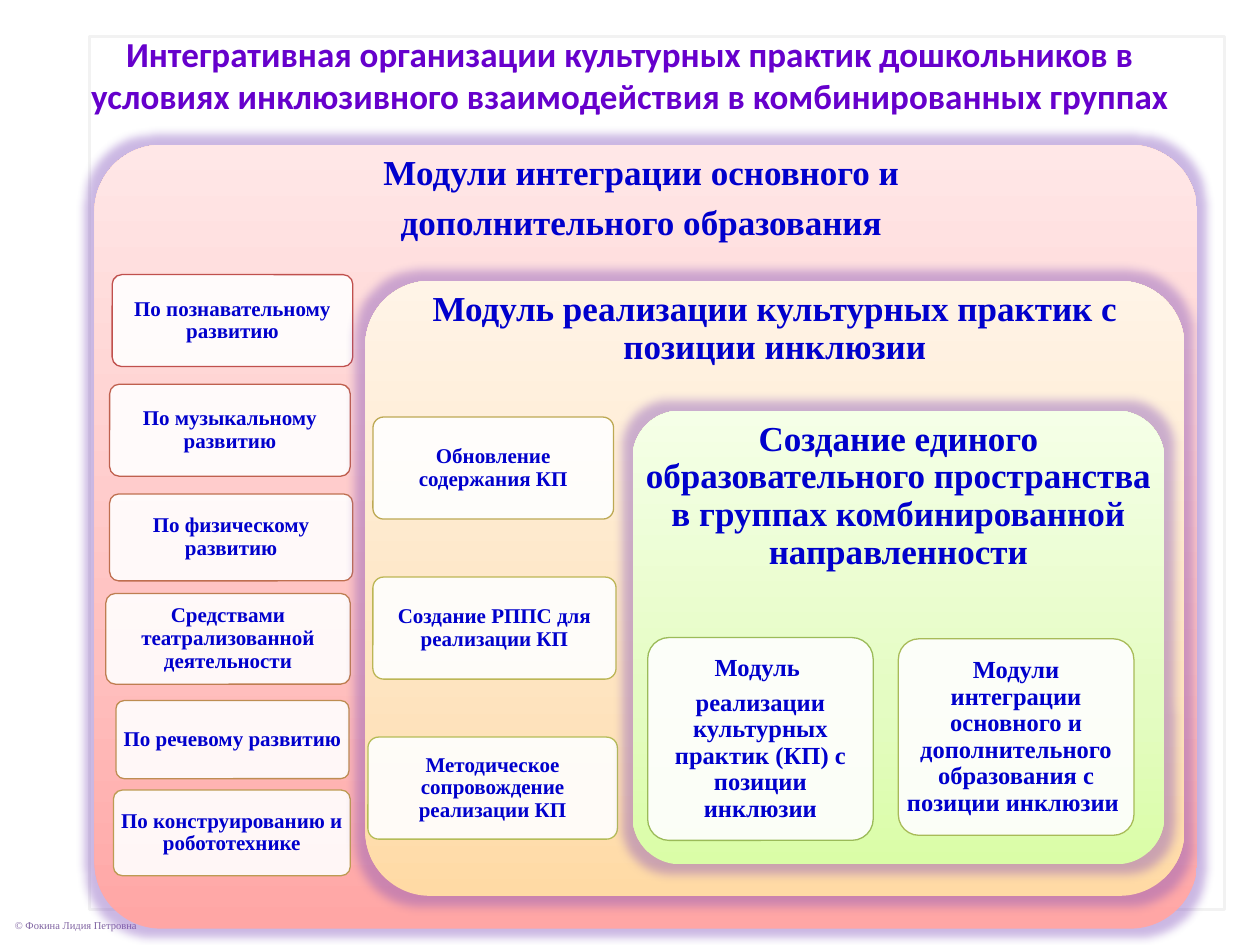
from copy import deepcopy
from dataclasses import dataclass

from lxml.etree import SubElement
from pptx import Presentation
from pptx.dml.color import RGBColor
from pptx.enum.shapes import MSO_SHAPE
from pptx.enum.text import MSO_ANCHOR, PP_ALIGN
from pptx.oxml.ns import qn
from pptx.util import Inches, Pt


@dataclass(frozen=True)
class Theme:
    serif: str = "Times New Roman"
    sans: str = "Calibri"
    title: str = "6600CC"
    text: str = "0000CC"
    copyright: str = "8064A2"
    white: str = "FFFFFF"
    frame: str = "F2F2F2"
    glow: str = "7E4DBA"
    heading_size: int = 20
    module_size: int = 14
    card_size: int = 12
    copyright_size: int = 6


THEME = Theme()
CORNER = 0.105
CORNER_INSET = 0.29  # share of the corner radius a rounded box keeps free of text


@dataclass(frozen=True)
class Card:
    box: tuple[float, float, float, float]
    line: str
    text: str
    size: int = THEME.card_size
    inset: float = 0.05


@dataclass(frozen=True)
class Panel:
    box: tuple[float, float, float, float]
    heading_height: float
    stops: tuple[str, str, str]
    heading: str
    cards: tuple[Card, ...]
    corner: float = CORNER


PANELS = (
    Panel((0.75, 1.15, 8.75, 6.22), 1.39, ("FFA6A5", "FFC0BF", "FFE7E7"),
          "Модули интеграции основного и \nдополнительного образования ", (
        Card((0.89, 2.18, 1.91, 0.73), "C0504D", "По познавательному развитию"),
        Card((0.87, 3.05, 1.91, 0.73), "BF604E", "По музыкальному развитию"),
        Card((0.87, 3.92, 1.93, 0.69), "BF6F4F", "По физическому развитию"),
        Card((0.84, 4.71, 1.94, 0.72), "BE7E51", "Средствами театрализованной деятельности"),
        Card((0.92, 5.56, 1.85, 0.62), "BE8D52", "По речевому развитию"),
        Card((0.9, 6.27, 1.88, 0.68), "BD9B53", "По конструированию и робототехнике"),
    ), corner=0.085),
    Panel((2.9, 2.23, 6.5, 4.88), 2.11, ("FFDAA5", "FEE4C0", "FFF4E7"),
          "Модуль реализации культурных практик с позиции инклюзии", (
        Card((2.96, 3.31, 1.91, 0.81), "BDA954", "Обновление содержания КП"),
        Card((2.96, 4.58, 1.93, 0.81), "BCB655", "Создание РППС для реализации КП"),
        Card((2.92, 5.85, 1.98, 0.81), "B5BC57", "Методическое сопровождение реализации КП"),
    )),
    Panel((5.02, 3.26, 4.22, 3.6), 2.2, ("DAFDA7", "E4FCC2", "F5FFE7"),
          "Создание единого образовательного пространства в группах "
          "комбинированной направленности", (
        Card((7.13, 5.07, 1.87, 1.56), "A8BB58",
             "Модули интеграции основного и дополнительного образования с позиции инклюзии ",
             THEME.module_size, 0.06),
        Card((5.14, 5.06, 1.79, 1.61), "9BBB59",
             "Модуль \nреализации культурных практик (КП) с позиции инклюзии",
             THEME.module_size, 0.06),
    )),
)


def rgb(value: str) -> RGBColor:
    return RGBColor.from_string(value)


def set_margins(frame, inset: float) -> None:
    frame.margin_left = frame.margin_right = Inches(inset)
    frame.margin_top = frame.margin_bottom = Inches(inset)


def style_runs(frame, font: str, size: int, color: str, bold: bool = True) -> None:
    for paragraph in frame.paragraphs:
        for run in paragraph.runs:
            run.font.name, run.font.size, run.font.bold = font, Pt(size), bold
            run.font.color.rgb = rgb(color)


def write_label(frame, text: str, size: int, anchor: MSO_ANCHOR) -> None:
    frame.text = text
    frame.word_wrap = True
    frame.vertical_anchor = anchor
    for paragraph in frame.paragraphs:
        paragraph.alignment = PP_ALIGN.CENTER
        paragraph.line_spacing = 0.9
        paragraph.space_after = Pt(0.35 * size)
    style_runs(frame, THEME.serif, size, THEME.text)


def add_plain(slide, kind: MSO_SHAPE, box: tuple):
    shape = slide.shapes.add_shape(kind, *map(Inches, box))
    shape.shadow.inherit = False
    return shape


def fill_translucent(shape, color: str, percent: int) -> None:
    shape.fill.solid()
    shape.fill.fore_color.rgb = rgb(color)
    color_element = shape.element.spPr.find(qn("a:solidFill"))[0]
    SubElement(color_element, qn("a:alpha"), val=str(percent * 1000))


def set_line(shape, color: str, width: float) -> None:
    shape.line.color.rgb = rgb(color)
    shape.line.width = Pt(width)


def fill_gradient(shape, colors: tuple[str, str, str]) -> None:
    shape.fill.gradient()
    shape.fill.gradient_angle = 90
    stop_list = shape.element.spPr.find(qn("a:gradFill")).find(qn("a:gsLst"))
    stop_list.insert(1, deepcopy(stop_list[0]))
    for stop, color, position in zip(shape.fill.gradient_stops, colors, (0, 0.35, 1)):
        stop.color.rgb = rgb(color)
        stop.position = position


def add_glow(shape) -> None:
    effects = shape.element.spPr.find(qn("a:effectLst"))
    glow = SubElement(effects, qn("a:glow"), rad=str(Pt(11)))
    color = SubElement(glow, qn("a:srgbClr"), val=THEME.glow)
    SubElement(color, qn("a:alpha"), val="40000")


def draw_card(slide, card: Card) -> None:
    shape = add_plain(slide, MSO_SHAPE.ROUNDED_RECTANGLE, card.box)
    shape.adjustments[0] = CORNER
    fill_translucent(shape, THEME.white, 90)
    set_line(shape, card.line, 0.75)
    set_margins(shape.text_frame, card.inset - CORNER_INSET * CORNER * min(card.box[2:]))
    write_label(shape.text_frame, card.text, card.size, MSO_ANCHOR.MIDDLE)


def draw_panel(slide, panel: Panel) -> None:
    shape = add_plain(slide, MSO_SHAPE.ROUNDED_RECTANGLE, panel.box)
    shape.adjustments[0] = panel.corner
    fill_gradient(shape, panel.stops)
    shape.line.fill.background()
    add_glow(shape)

    heading_box = (*panel.box[:3], panel.heading_height)
    heading = slide.shapes.add_textbox(*map(Inches, heading_box)).text_frame
    set_margins(heading, 0.08)
    write_label(heading, panel.heading, THEME.heading_size, MSO_ANCHOR.TOP)

    for card in panel.cards:
        draw_card(slide, card)


def draw_backdrop(slide) -> None:
    frame = add_plain(slide, MSO_SHAPE.RECTANGLE, (0.71, 0.29, 9.01, 6.93))
    fill_translucent(frame, THEME.white, 70)
    set_line(frame, THEME.frame, 2)

    copyright_box = (0.02, 7.24, 1.2, 0.2)
    notice = slide.shapes.add_textbox(*map(Inches, copyright_box))
    notice.text_frame.text = "© Фокина Лидия Петровна"
    notice.text_frame.word_wrap = False
    notice.text_frame.vertical_anchor = MSO_ANCHOR.MIDDLE
    style_runs(notice.text_frame, THEME.serif, THEME.copyright_size, THEME.copyright, False)

    # The title stands in front of the backdrop
    notice.element.addnext(slide.shapes.title.element)


def write_title(slide) -> None:
    title = slide.shapes.title
    title.left, title.top, title.width, title.height = map(Inches, (0.5, 0.21, 9, 0.63))
    frame = title.text_frame
    frame.text = ("Интегративная организации культурных практик дошкольников в условиях "
                  "инклюзивного взаимодействия в комбинированных группах")
    frame.word_wrap = True
    frame.vertical_anchor = MSO_ANCHOR.TOP
    frame.paragraphs[0].alignment = PP_ALIGN.CENTER
    style_runs(frame, THEME.sans, THEME.heading_size, THEME.title)


def main() -> None:
    deck = Presentation()
    deck.slide_width, deck.slide_height = Inches(10), Inches(7.5)
    slide = deck.slides.add_slide(deck.slide_layouts[5])
    draw_backdrop(slide)
    write_title(slide)
    # Nested panels, from the outermost inwards
    for panel in PANELS:
        draw_panel(slide, panel)
    deck.save("out.pptx")


if __name__ == "__main__":
    main()
